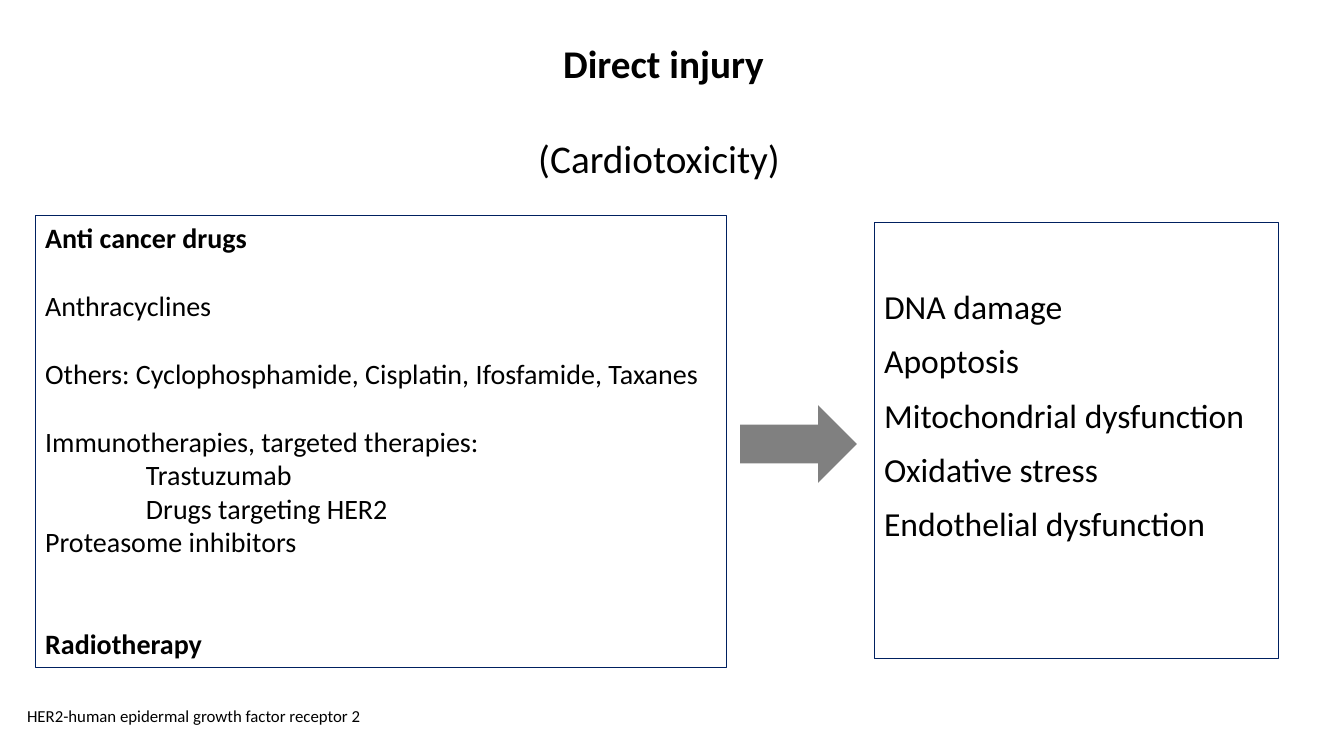
import pptx
import pptx.util
import pptx.dml.color
import pptx.enum.shapes
import pptx.enum.text

Inches, Pt = pptx.util.Inches, pptx.util.Pt
Shapes = pptx.enum.shapes.MSO_SHAPE
Align = pptx.enum.text.PP_ALIGN

COLORS = {"text": "000000", "border": "002060", "arrow": "808080"}
FONT = "Calibri"
LINE_HEIGHT = 1.22

# text, bold, blank lines before, indent in inches
TITLE = [("Direct injury", True, 0, 0), ("(Cardiotoxicity) ", False, 1, 0)]
CAUSES = [
    ("Anti cancer drugs", True, 0, 0),
    ("Anthracyclines", False, 1, 0),
    ("Others: Cyclophosphamide, Cisplatin, Ifosfamide, Taxanes", False, 1, 0),
    ("Immunotherapies, targeted therapies:", False, 1, 0),
    ("Trastuzumab", False, 0, 1),
    ("Drugs targeting HER2", False, 0, 1),
    ("Proteasome inhibitors", False, 0, 0),
    ("Radiotherapy", True, 2, 0),
]
EFFECTS = [
    (effect, False, 0, 0)
    for effect in (
        "DNA damage",
        "Apoptosis",
        "Mitochondrial dysfunction",
        "Oxidative stress",
        "Endothelial dysfunction",
    )
]
FOOTNOTE = [("HER2-human epidermal growth factor receptor 2", False, 0, 0)]

TITLE_BOX = (0.17, 0.34, 12.82, 1.51)
CAUSES_BOX = (0.35, 2.14, 6.86, 4.48)
EFFECTS_BOX = (8.67, 2.21, 4.01, 4.32)
FOOTNOTE_BOX = (0.17, 6.95, 6.67, 0.3)
ARROW_BOX = (7.34, 4.02, 1.16, 0.77)


def color(name):
    return pptx.dml.color.RGBColor.from_string(COLORS[name])


def write(shape, lines, size, align=Align.LEFT, top=0.05, spacing=None, after=0):
    frame = shape.text_frame
    frame.word_wrap = True
    frame.vertical_anchor = pptx.enum.text.MSO_ANCHOR.TOP
    frame.margin_top = Inches(top)
    frame.text = "\n".join(line[0] for line in lines)
    for paragraph, (_, bold, blanks, indent) in zip(frame.paragraphs, lines):
        paragraph.alignment = align
        paragraph.space_before = Pt(round(blanks * size * LINE_HEIGHT, 1))
        paragraph.space_after = Pt(after)
        if spacing:
            paragraph.line_spacing = spacing
        if indent:
            properties = paragraph._p.get_or_add_pPr()
            properties.set("marL", str(Inches(indent)))
            properties.set("indent", "0")
        for run in paragraph.runs:
            run.font.name = FONT
            run.font.size = Pt(size)
            run.font.bold = bold
            run.font.color.rgb = color("text")


def add_shape(slide, kind, box):
    shape = slide.shapes.add_shape(kind, *map(Inches, box))
    shape.shadow.inherit = False
    return shape


def add_panel(slide, box):
    panel = add_shape(slide, Shapes.RECTANGLE, box)
    panel.fill.background()
    panel.line.color.rgb = color("border")
    panel.line.width = Pt(0.75)
    return panel


def main():
    presentation = pptx.Presentation()
    presentation.slide_width = Inches(13.33)
    presentation.slide_height = Inches(7.5)
    slide = presentation.slides.add_slide(presentation.slide_layouts[6])

    title = slide.shapes.add_textbox(*map(Inches, TITLE_BOX))
    write(title, TITLE, 28, Align.CENTER)

    write(add_panel(slide, CAUSES_BOX), CAUSES, 20)
    write(add_panel(slide, EFFECTS_BOX), EFFECTS, 24, top=0.6, spacing=1.07, after=8)

    footnote = slide.shapes.add_textbox(*map(Inches, FOOTNOTE_BOX))
    write(footnote, FOOTNOTE, 12)

    arrow = add_shape(slide, Shapes.RIGHT_ARROW, ARROW_BOX)
    arrow.fill.solid()
    arrow.fill.fore_color.rgb = color("arrow")
    arrow.line.fill.background()

    presentation.save("out.pptx")


if __name__ == "__main__":
    main()
